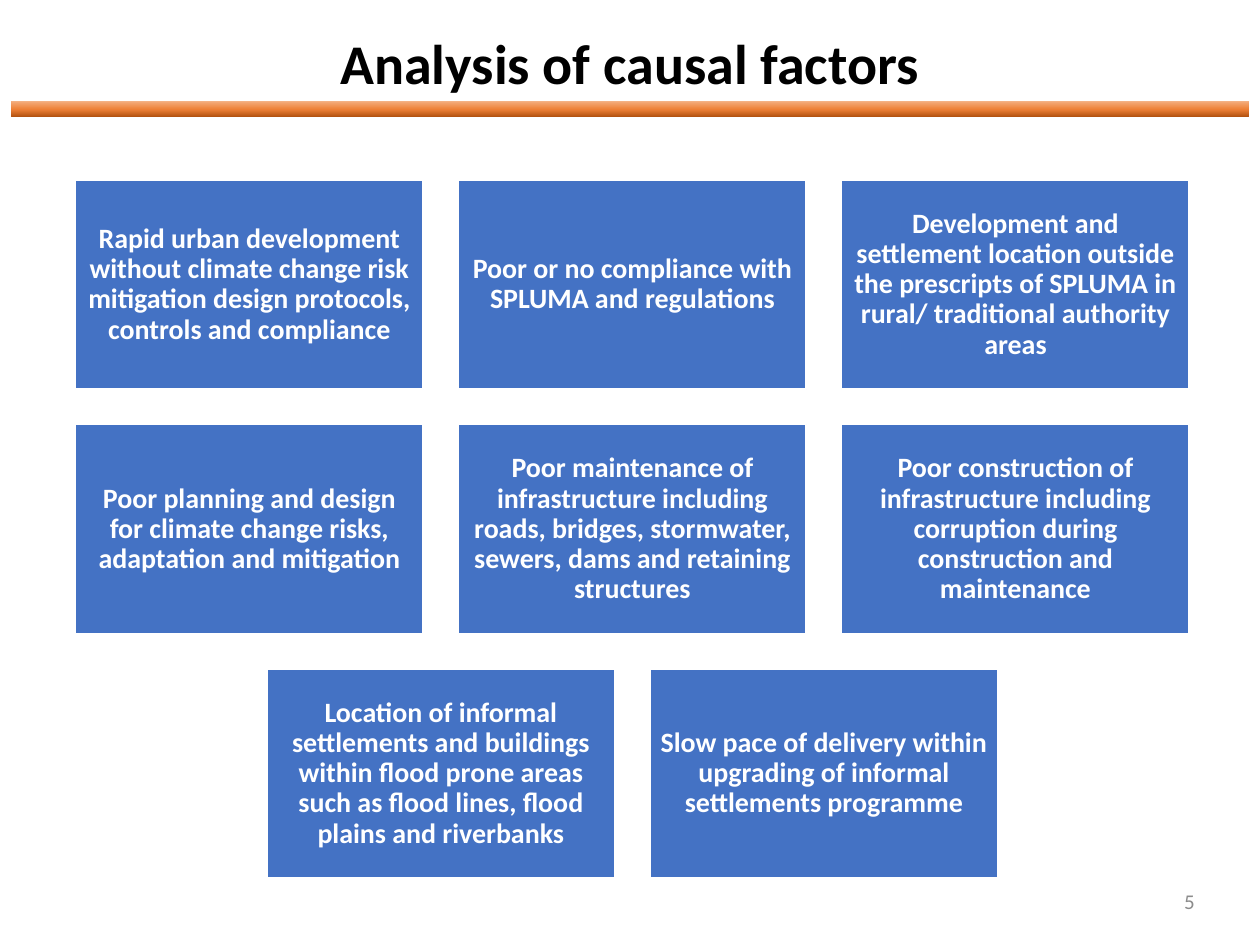
from copy import deepcopy
from dataclasses import dataclass

from pptx import Presentation
from pptx import util as u
from pptx.dml.color import RGBColor
from pptx.enum import shapes, text
from pptx.oxml.ns import qn

BLACK = RGBColor(0x00, 0x00, 0x00)
WHITE = RGBColor(0xFF, 0xFF, 0xFF)
GREY = RGBColor(0x8C, 0x8C, 0x8C)
BLUE = RGBColor(0x44, 0x72, 0xC4)
BAR_STOPS = (
    (0, RGBColor(0xB0, 0x50, 0x0F)),
    (0.48, RGBColor(0xEE, 0x81, 0x37)),
    (1, RGBColor(0xF4, 0xB1, 0x83)),
)

FONT = "Calibri"
CARD_WIDTH, CARD_HEIGHT, GAP = 2.76, 1.66, 0.28
GRID_CENTER, GRID_TOP = 5.02, 1.43
CARD_INSET = 0.07

FACTOR_ROWS = (
    (
        "Rapid urban development without climate change risk mitigation "
        "design protocols, controls and compliance",
        "Poor or no compliance with SPLUMA and regulations",
        "Development and settlement location outside the prescripts of "
        "SPLUMA in rural/ traditional authority areas",
    ),
    (
        "Poor planning and design for climate change risks, adaptation "
        "and mitigation",
        "Poor maintenance of infrastructure including roads, bridges, "
        "stormwater, sewers, dams and retaining structures",
        "Poor construction of infrastructure including corruption during "
        "construction and maintenance",
    ),
    (
        "Location of informal settlements and buildings within flood prone "
        "areas such as flood lines, flood plains and riverbanks",
        "Slow pace of delivery within upgrading of informal settlements "
        "programme",
    ),
)


@dataclass(frozen=True)
class Box:
    left: float
    top: float
    width: float
    height: float

    def lengths(self) -> tuple:
        return tuple(u.Inches(n) for n in (self.left, self.top, self.width, self.height))


@dataclass(frozen=True)
class Style:
    size: float
    color: RGBColor
    bold: bool = False
    align: text.PP_ALIGN = text.PP_ALIGN.CENTER
    line_spacing: float = 0.9


TITLE = Style(32, BLACK, bold=True)
CARD = Style(16, WHITE, bold=True)
PAGE_NUMBER = Style(12, GREY, align=text.PP_ALIGN.RIGHT, line_spacing=1.0)


def write(frame, wording: str, style: Style) -> None:
    frame.word_wrap = True
    frame.vertical_anchor = text.MSO_ANCHOR.MIDDLE
    frame.text = wording
    paragraph = frame.paragraphs[0]
    paragraph.alignment = style.align
    paragraph.line_spacing = style.line_spacing
    font = paragraph.runs[0].font
    font.name = FONT
    font.size = u.Pt(style.size)
    font.bold = style.bold
    font.color.rgb = style.color


def add_label(slide, box: Box, wording: str, style: Style) -> None:
    write(slide.shapes.add_textbox(*box.lengths()).text_frame, wording, style)


def add_rectangle(slide, box: Box):
    rectangle = slide.shapes.add_shape(shapes.MSO_SHAPE.RECTANGLE, *box.lengths())
    rectangle.shadow.inherit = False
    return rectangle


def add_title_bar(slide, box: Box) -> None:
    bar = add_rectangle(slide, box)
    bar.line.fill.background()
    bar.fill.gradient()
    bar.fill.gradient_angle = 90
    stop_list = next(bar._element.spPr.iter(qn("a:gsLst")))
    stop_list.append(deepcopy(stop_list[-1]))
    for stop, (position, color) in zip(bar.fill.gradient_stops, BAR_STOPS):
        stop.position = position
        stop.color.rgb = color


def add_card(slide, box: Box, factor: str) -> None:
    card = add_rectangle(slide, box)
    card.fill.solid()
    card.fill.fore_color.rgb = BLUE
    card.line.color.rgb = WHITE
    card.line.width = u.Pt(1)
    frame = card.text_frame
    frame.margin_left = frame.margin_right = u.Inches(CARD_INSET)
    frame.margin_top = frame.margin_bottom = u.Inches(CARD_INSET)
    write(frame, factor, CARD)


def add_factor_grid(slide) -> None:
    """Draw each row of cards centred on the same vertical axis."""
    for row, factors in enumerate(FACTOR_ROWS):
        row_width = len(factors) * (CARD_WIDTH + GAP) - GAP
        row_left = GRID_CENTER - row_width / 2
        top = GRID_TOP + row * (CARD_HEIGHT + GAP)
        for column, factor in enumerate(factors):
            left = row_left + column * (CARD_WIDTH + GAP)
            add_card(slide, Box(left, top, CARD_WIDTH, CARD_HEIGHT), factor)


def main() -> None:
    deck = Presentation()
    deck.slide_width, deck.slide_height = u.Inches(10), u.Inches(7.5)
    slide = deck.slides.add_slide(deck.slide_layouts[6])
    add_title_bar(slide, Box(0.09, 0.8, 9.82, 0.13))
    add_label(slide, Box(0.09, 0.25, 9.82, 0.55), "Analysis of causal factors", TITLE)
    add_label(slide, Box(7.33, 6.95, 2.25, 0.4), "5", PAGE_NUMBER)
    add_factor_grid(slide)
    deck.save("out.pptx")


if __name__ == "__main__":
    main()
